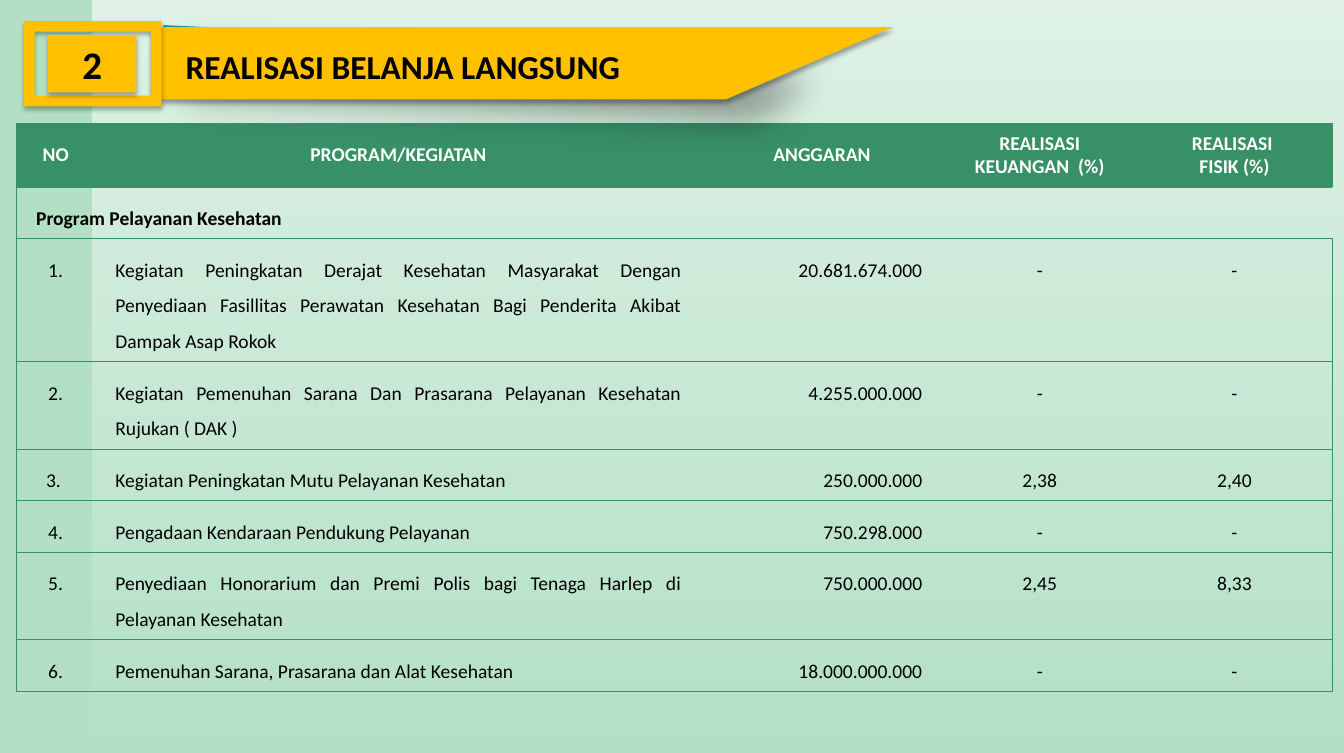
from lxml import etree
from pptx import Presentation
from pptx.dml.color import RGBColor
from pptx.enum.shapes import MSO_SHAPE
from pptx.enum.text import MSO_ANCHOR, PP_ALIGN
from pptx.oxml import parse_xml
from pptx.oxml.ns import nsdecls, qn
from pptx.util import Inches, Pt

LEFT, CENTER, RIGHT, JUSTIFY = PP_ALIGN.LEFT, PP_ALIGN.CENTER, PP_ALIGN.RIGHT, PP_ALIGN.JUSTIFY
TOP, MIDDLE = MSO_ANCHOR.TOP, MSO_ANCHOR.MIDDLE
RECTANGLE, FRAME = MSO_SHAPE.RECTANGLE, MSO_SHAPE.FRAME
COLORS = {"mint": "B3E0C5", "green": "389066", "gold": "FFC000", "teal": "1B91A1",
          "black": "000000", "white": "FFFFFF"}
NO_TABLE_STYLE = "{2D5ABB26-0587-4C30-8999-92F81FD0307C}"


def write_text(frame, text, size=14, color="black", bold=False, align=LEFT, spacing=None):
    """Fill a text frame, one paragraph for each line of text."""
    frame.word_wrap = True
    for index, line in enumerate(text.split("\n")):
        para = frame.add_paragraph() if index else frame.paragraphs[0]
        para.alignment = align
        if spacing:
            para.line_spacing = spacing
        span = para.add_run()
        span.text = line
        span.font.name = "Calibri"
        span.font.size = Pt(size)
        span.font.bold = bold
        span.font.color.rgb = RGBColor.from_string(COLORS[color])


def paint(shape, color, opacity=32, blur=3.5, distance=2.2, angle=90):
    """Give a shape a plain fill, no outline and a soft shadow."""
    shape.shadow.inherit = False
    shape.fill.solid()
    shape.fill.fore_color.rgb = RGBColor.from_string(COLORS[color])
    shape.line.fill.background()
    effects = shape._element.spPr.find(qn("a:effectLst"))
    shadow = etree.SubElement(effects, qn("a:outerShdw"), blurRad=str(Pt(blur)),
                              dist=str(Pt(distance)), dir=str(angle * 60000), rotWithShape="0")
    tint = etree.SubElement(shadow, qn("a:srgbClr"), val=COLORS["black"])
    etree.SubElement(tint, qn("a:alpha"), val=str(opacity * 1000))


deck = Presentation()
deck.slide_width, deck.slide_height = Inches(13.39), Inches(7.5)
page = deck.slides.add_slide(deck.slide_layouts[6])
shapes = page.shapes

# Background with a white veil that fades downwards
page.background.fill.solid()
page.background.fill.fore_color.rgb = RGBColor.from_string(COLORS["mint"])
veil = shapes.add_shape(RECTANGLE, Inches(0.92), 0, Inches(12.47), Inches(7.5))
veil.shadow.inherit = False
veil.line.fill.background()
veil_fill = parse_xml(
    f'<a:gradFill {nsdecls("a")} rotWithShape="1"><a:gsLst>'
    f'<a:gs pos="0"><a:srgbClr val="{COLORS["white"]}"><a:alpha val="60000"/></a:srgbClr></a:gs>'
    f'<a:gs pos="100000"><a:srgbClr val="{COLORS["white"]}"><a:alpha val="0"/></a:srgbClr></a:gs>'
    '</a:gsLst><a:lin ang="5400000" scaled="0"/></a:gradFill>')
veil._element.spPr.find(qn("a:prstGeom")).addnext(veil_fill)

# Budget table
HEADER = ["NO", "PROGRAM/KEGIATAN", "ANGGARAN", "REALISASI KEUANGAN  (%)", "REALISASI \nFISIK (%)"]
ACTIVITIES = [
    ["1.", "Kegiatan Peningkatan Derajat Kesehatan Masyarakat Dengan Penyediaan Fasillitas "
     "Perawatan Kesehatan Bagi Penderita Akibat Dampak Asap Rokok", "20.681.674.000", "-", "-"],
    ["2.", "Kegiatan Pemenuhan Sarana Dan Prasarana Pelayanan Kesehatan Rujukan ( DAK )",
     "4.255.000.000", "-", "-"],
    ["3. ", "Kegiatan Peningkatan Mutu Pelayanan Kesehatan", "250.000.000", "2,38", "2,40"],
    ["4.", "Pengadaan Kendaraan Pendukung Pelayanan", "750.298.000", "-", "-"],
    ["5.", "Penyediaan Honorarium dan Premi Polis bagi Tenaga Harlep di Pelayanan Kesehatan",
     "750.000.000", "2,45", "8,33"],
    ["6.", "Pemenuhan Sarana, Prasarana dan Alat Kesehatan", "18.000.000.000", "-", "-"],
]
ROWS = [HEADER, ["Program Pelayanan Kesehatan", "", "", "", ""], *ACTIVITIES]
COLUMN_WIDTHS = [0.79, 6.04, 2.4, 1.94, 1.94]
ROW_HEIGHTS = [0.62, 0.5, 1.22, 0.86, 0.5, 0.5, 0.86, 0.5]
ALIGNMENTS = [CENTER, JUSTIFY, RIGHT, CENTER, CENTER]

holder = shapes.add_table(len(ROWS), len(HEADER), Inches(0.16), Inches(1.23),
                          Inches(sum(COLUMN_WIDTHS)), Inches(sum(ROW_HEIGHTS)))
table = holder.table
table.first_row = table.horz_banding = False
table._tbl.tblPr.find(qn("a:tableStyleId")).text = NO_TABLE_STYLE
for column, width in zip(table.columns, COLUMN_WIDTHS):
    column.width = Inches(width)
for row, height in zip(table.rows, ROW_HEIGHTS):
    row.height = Inches(height)
table.cell(1, 0).merge(table.cell(1, 4))

for row_index, row in enumerate(ROWS):
    is_header, is_program = row_index == 0, row_index == 1
    for column_index, text in enumerate(row):
        cell = table.cell(row_index, column_index)
        cell.margin_left = cell.margin_right = Inches(0.2)
        cell.margin_top = cell.margin_bottom = Inches(0.08)
        cell.vertical_anchor = MIDDLE if is_header else TOP
        if is_header:
            cell.fill.solid()
            cell.fill.fore_color.rgb = RGBColor.from_string(COLORS["green"])
        else:
            cell.fill.background()
        if text:
            align = CENTER if is_header else LEFT if is_program else ALIGNMENTS[column_index]
            write_text(cell.text_frame, text, color="white" if is_header else "black",
                       bold=is_header or is_program, align=align,
                       spacing=None if is_header else 1.5)
        # Rules between rows and around the table, none between columns
        sides = ["lnL"] * (column_index == 0) + ["lnR"] * (column_index == 4) + ["lnT", "lnB"]
        for position, side in enumerate(sides):
            cell._tc.get_or_add_tcPr().insert(position, parse_xml(
                f'<a:{side} {nsdecls("a")} w="{Pt(0.5)}"><a:solidFill>'
                f'<a:srgbClr val="{COLORS["green"]}"/></a:solidFill></a:{side}>'))

# Title ribbon: teal underside, then gold banner
UNDERSIDE = [(1.63, 0.25), (7.74, 0.53), (7.73, 0.66), (7.26, 0.97), (1.61, 0.71)]
BANNER = [(1.52, 0.27), (8.9, 0.27), (7.23, 0.99), (1.52, 0.99)]
UNDERSIDE_SHADOW = {"opacity": 35, "blur": 25, "distance": 25, "angle": 45}
for outline, color, shadow in [(UNDERSIDE, "teal", UNDERSIDE_SHADOW), (BANNER, "gold", {})]:
    points = [(Inches(x), Inches(y)) for x, y in outline]
    builder = shapes.build_freeform(*points[0])
    builder.add_line_segments(points[1:], close=True)
    paint(builder.convert_to_shape(), color, **shadow)

# Section number in its frame
frame = shapes.add_shape(FRAME, Inches(0.24), Inches(0.21), Inches(1.37), Inches(0.85))
number = shapes.add_shape(RECTANGLE, Inches(0.48), Inches(0.35), Inches(0.88), Inches(0.57))
for badge in (frame, number):
    paint(badge, "gold")
number.text_frame.vertical_anchor = MIDDLE
write_text(number.text_frame, "2", size=28, bold=True, align=CENTER)

# Title
title = shapes.add_textbox(Inches(1.85), Inches(0.41), Inches(5.63), Inches(0.5))
title.text_frame.margin_left = 0
title.text_frame.vertical_anchor = MIDDLE
write_text(title.text_frame, "REALISASI BELANJA LANGSUNG", size=24, bold=True)

deck.save("out.pptx")
